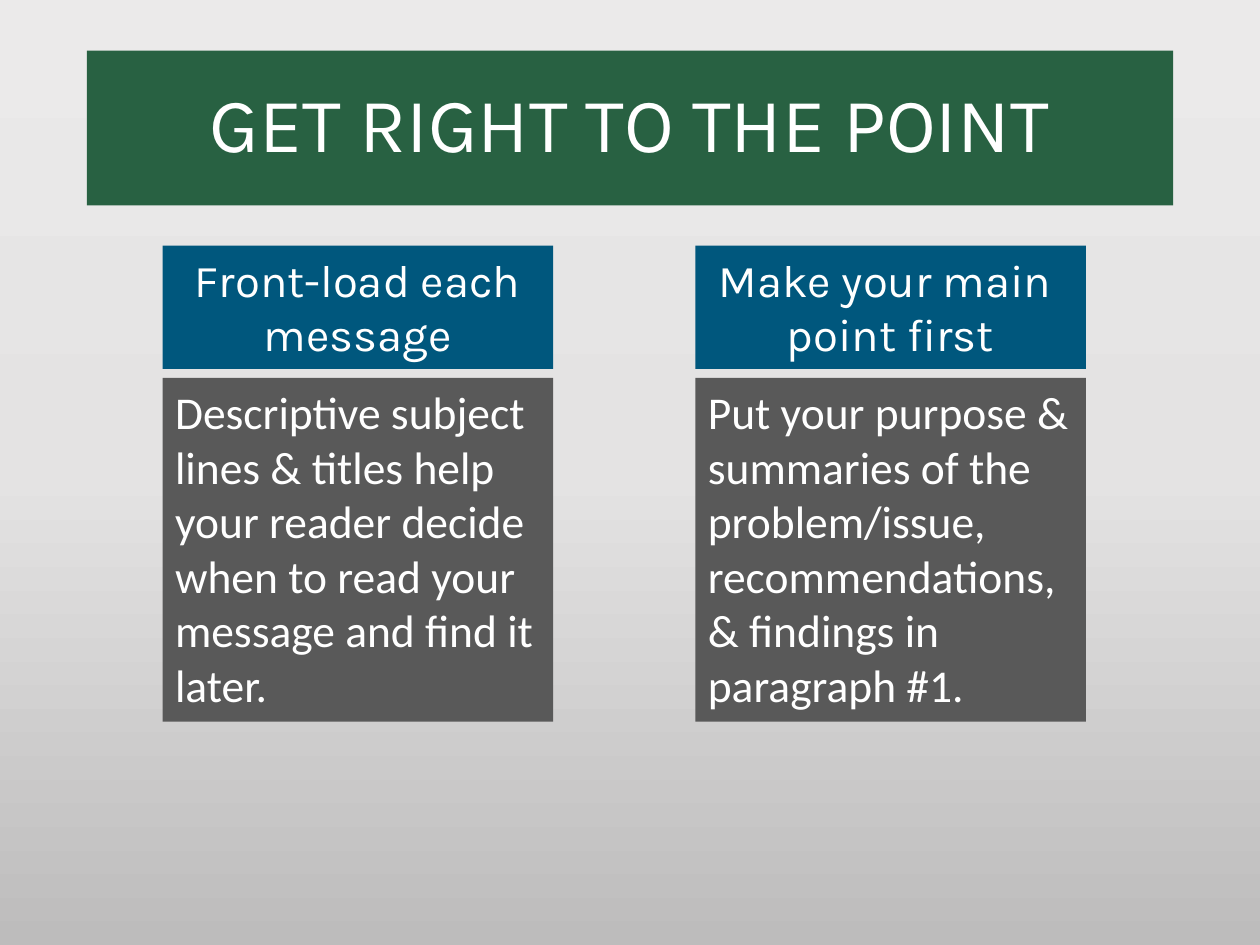
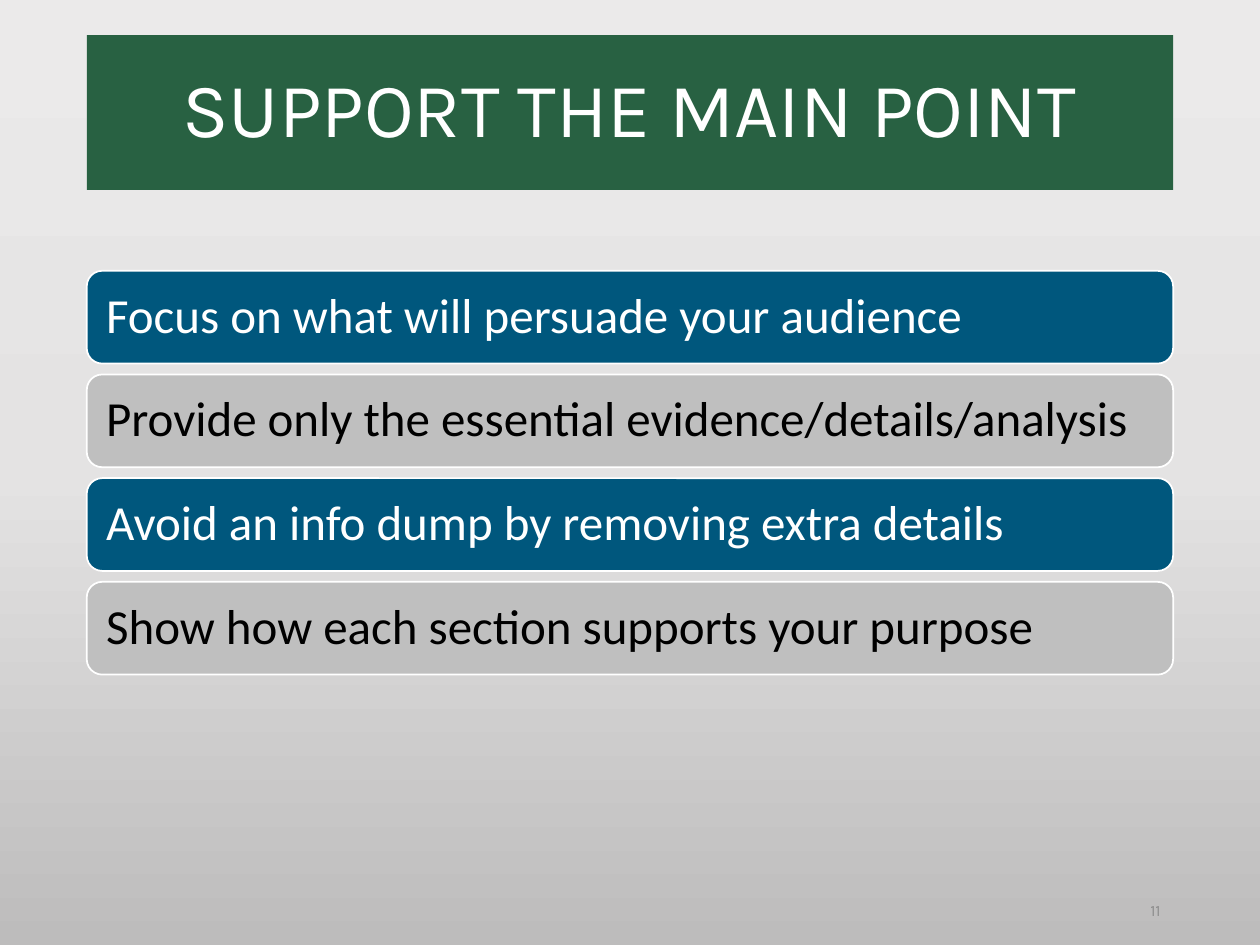
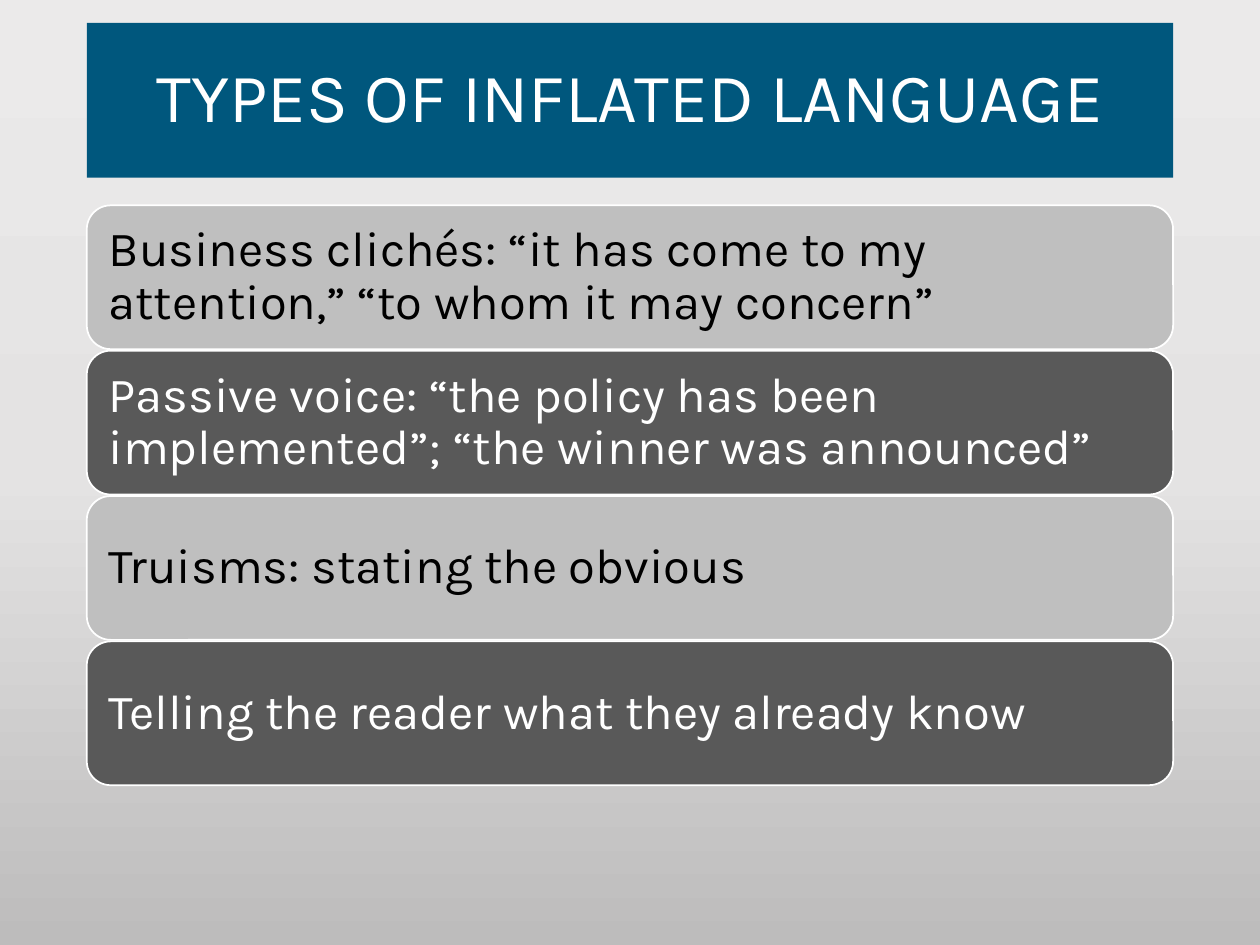
import copy

from pptx import Presentation
from pptx import util as u
from pptx.dml.color import RGBColor
from pptx.enum import shapes, text
from pptx.oxml.ns import qn

GREEN, BLUE, DARK, LIGHT = "286142", "00577D", "595959", "BFBFBF"
WHITE, BLACK, MUTED = "FFFFFF", "000000", "8C8C8C"
BACKDROP = ((0, "EBEAEA"), (0.5, "E4E3E3"), (1, "BDBCBC"))
HEAD_FONT, BODY_FONT = "Karla", "Calibri"
MARGIN, CONTENT_W, TITLE_H = 1.75, 21.9, 3.12
CENTER, LEFT, RIGHT = text.PP_ALIGN.CENTER, text.PP_ALIGN.LEFT, text.PP_ALIGN.RIGHT
TOP, MIDDLE, BOTTOM = text.MSO_ANCHOR.TOP, text.MSO_ANCHOR.MIDDLE, text.MSO_ANCHOR.BOTTOM


def rgb(color):
    return RGBColor.from_string(color)


def place(sp, left, top, width, height):
    sp.left, sp.top = u.Cm(left), u.Cm(top)
    sp.width, sp.height = u.Cm(width), u.Cm(height)


def paint(sp, color):
    sp.fill.solid()
    sp.fill.fore_color.rgb = rgb(color)


def write(sp, words, size, color, font=HEAD_FONT, align=LEFT, anchor=TOP, spacing=1.0):
    tf = sp.text_frame
    tf.text = words
    tf.word_wrap = True
    tf.auto_size = text.MSO_AUTO_SIZE.NONE
    tf.vertical_anchor = anchor
    for p in tf.paragraphs:
        p.alignment = align
        p.line_spacing = spacing
        p.font.name = font
        p.font.size = u.Pt(size)
        p.font.color.rgb = rgb(color)


def add_box(s, kind, box, color):
    sp = s.shapes.add_shape(kind, *(u.Cm(n) for n in box))
    sp.shadow.inherit = False
    paint(sp, color)
    return sp


def set_backdrop(master):
    fill = master.background.fill
    fill.gradient()
    fill.gradient_angle = 270
    stops = next(master.element.iter(qn("a:gsLst")))
    stops.append(copy.deepcopy(stops[-1]))
    for stop, (position, color) in zip(fill.gradient_stops, BACKDROP):
        stop.position = position
        stop.color.rgb = rgb(color)


def add_titled_slide(prs, title, top, color, size=44):
    s = prs.slides.add_slide(prs.slide_layouts[5])
    sp = s.shapes.title
    place(sp, MARGIN, top, CONTENT_W, TITLE_H)
    paint(sp, color)
    write(sp, title, size, WHITE, align=CENTER, anchor=MIDDLE, spacing=0.9)
    return s


def add_column(s, left, top, width, heading, body):
    head_h, body_h, gap = 2.49, 6.93, 0.18
    rect = shapes.MSO_SHAPE.RECTANGLE
    head = add_box(s, rect, (left, top, width, head_h), BLUE)
    write(head, heading, 26, WHITE, align=CENTER)
    detail = add_box(s, rect, (left, top + head_h + gap, width, body_h), DARK)
    write(detail, body, 26, WHITE, font=BODY_FONT)
    for sp in (head, detail):
        sp.line.fill.background()


def add_bars(s, top, height, pitch, items, styles, font):
    for i, words in enumerate(items):
        color, ink = styles[i % len(styles)]
        box = (MARGIN, top + i * pitch, CONTENT_W, height)
        sp = add_box(s, shapes.MSO_SHAPE.ROUNDED_RECTANGLE, box, color)
        sp.line.color.rgb = rgb(WHITE)
        sp.line.width = u.Pt(1)
        write(sp, words, 28, ink, font=font, anchor=MIDDLE, spacing=0.9)
        tf = sp.text_frame
        tf.margin_left = tf.margin_right = tf.margin_top = tf.margin_bottom = u.Cm(0.3)


def add_page_number(s, number):
    width = 5.72
    sp = s.shapes.add_textbox(0, 0, 0, 0)
    place(sp, MARGIN + CONTENT_W - width, 17.65, width, 1.02)
    write(sp, number, 9, MUTED, align=RIGHT, anchor=BOTTOM)


def main():
    prs = Presentation()
    prs.slide_width, prs.slide_height = u.Cm(25.4), u.Cm(19.05)
    set_backdrop(prs.slide_master)

    s = add_titled_slide(prs, "GET RIGHT TO THE POINT", 1.02, GREEN)
    columns = (
        ("Front-load each message",
         "Descriptive subject lines & titles help your reader decide when to "
         "read your message and find it later."),
        ("Make your main \npoint first",
         "Put your purpose & summaries of the problem/issue, recommendations, "
         "& findings in paragraph #1."),
    )
    for i, (heading, body) in enumerate(columns):
        add_column(s, 3.28 + i * 10.74, 4.95, 7.87, heading, body)

    s = add_titled_slide(prs, "SUPPORT THE MAIN POINT", 0.71, GREEN)
    add_bars(s, 5.46, 1.87, 2.09, (
        "Focus on what will persuade your audience",
        "Provide only the essential evidence/details/analysis",
        "Avoid an info dump by removing extra details",
        "Show how each section supports your purpose",
    ), ((BLUE, WHITE), (LIGHT, BLACK)), BODY_FONT)
    add_page_number(s, "11")

    s = add_titled_slide(prs, "TYPES OF INFLATED LANGUAGE", 0.46, BLUE, 39.6)
    add_bars(s, 4.14, 2.9, 2.93, (
        "Business clichés: “it has come to my attention,” “to whom it may concern”",
        "Passive voice: “the policy has been implemented”; “the winner was announced”",
        "Truisms: stating the obvious",
        "Telling the reader what they already know",
    ), ((LIGHT, BLACK), (DARK, WHITE)), HEAD_FONT)

    prs.save("out.pptx")


if __name__ == "__main__":
    main()
